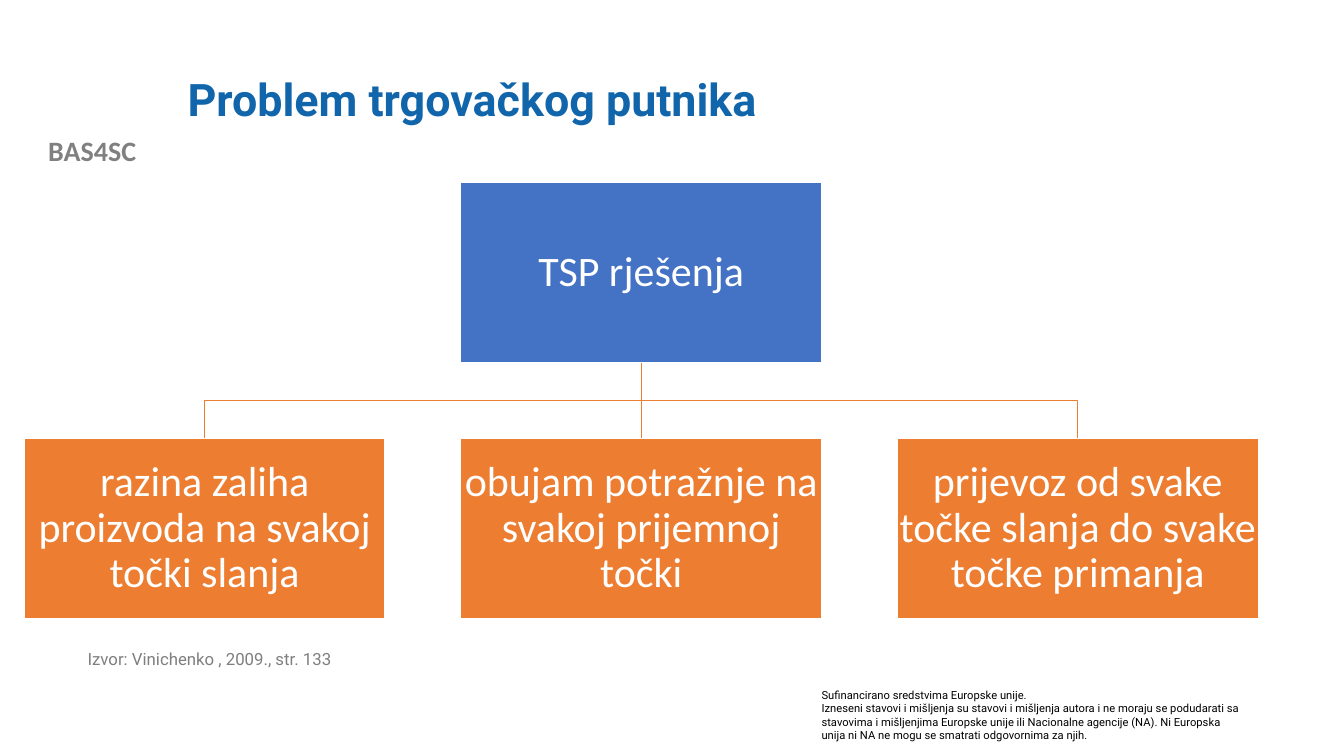
import pptx
import pptx.util
import pptx.dml.color
import pptx.enum.shapes
import pptx.enum.text
import pptx.oxml
import pptx.oxml.ns

Inches, Pt = pptx.util.Inches, pptx.util.Pt
ALIGN, ANCHOR = pptx.enum.text.PP_ALIGN, pptx.enum.text.MSO_ANCHOR
COLORS = {"white": "FFFFFF", "root": "4472C4", "branch": "ED7D31", "title": "1065AB",
          "project": "808080", "source": "7F7F7F", "black": "000000"}
ROOT = "TSP rješenja"
BRANCHES = ["razina zaliha proizvoda na svakoj točki slanja",
            "obujam potražnje na svakoj prijemnoj točki",
            "prijevoz od svake točke slanja do svake točke primanja"]
DISCLAIMER = ("Sufinancirano sredstvima Europske unije.\n"
              "Izneseni stavovi i mišljenja su stavovi i mišljenja autora i ne moraju se "
              "podudarati sa stavovima i mišljenjima Europske unije ili Nacionalne agencije "
              "(NA). Ni Europska unija ni NA ne mogu se smatrati odgovornima za njih.")


def rgb(name):
    return pptx.dml.color.RGBColor.from_string(COLORS[name])


def write(tf, text, size, color, font="Roboto", bold=False, align=ALIGN.LEFT, spacing=None):
    tf.word_wrap = True
    tf.text = text
    for p in tf.paragraphs:
        p.alignment = align
        p.line_spacing = spacing
        for r in p.runs:
            r.font.name, r.font.size, r.font.bold = font, Pt(size), bold
            r.font.color.rgb = rgb(color)


def add_title(s, box, text):
    title = s.shapes.title
    title.left, title.top, title.width, title.height = map(Inches, box)
    write(title.text_frame, text, 32, "title", bold=True, spacing=0.9)
    title.text_frame.vertical_anchor = ANCHOR.MIDDLE
    title.text_frame.auto_size = pptx.enum.text.MSO_AUTO_SIZE.NONE


def add_text(s, box, text, size, color, **style):
    write(s.shapes.add_textbox(*map(Inches, box)).text_frame, text, size, color, **style)


def style_line(sp, color):
    sp.line.color.rgb = rgb(color)
    sp.line.width = Pt(1)


def add_node(s, box, text, fill):
    sp = s.shapes.add_shape(pptx.enum.shapes.MSO_SHAPE.RECTANGLE, *map(Inches, box))
    sp.shadow.inherit = False
    sp.fill.solid()
    sp.fill.fore_color.rgb = rgb(fill)
    style_line(sp, "white")
    tf = sp.text_frame
    tf.margin_left = tf.margin_right = tf.margin_top = tf.margin_bottom = Inches(0.02)
    tf.vertical_anchor = ANCHOR.MIDDLE
    write(tf, text, 30, "white", font="Calibri", align=ALIGN.CENTER, spacing=0.9)
    return sp


def add_elbow(s, start, end):
    (x1, y1), (x2, y2) = map(Inches, start), map(Inches, end)
    middle = (y1 + y2) // 2
    builder = s.shapes.build_freeform(x1, y1)
    builder.add_line_segments([(x1, middle), (x2, middle), (x2, y2)], close=False)
    sp = builder.convert_to_shape()
    sp.shadow.inherit = False
    sp.fill.background()
    style_line(sp, "branch")


def add_stem(s, upper, lower):
    x = upper.left + upper.width // 2
    line = s.shapes.add_connector(pptx.enum.shapes.MSO_CONNECTOR.STRAIGHT,
                                  x, upper.top + upper.height, x, lower.top)
    style_line(line, "branch")
    line._element.spPr.append(pptx.oxml.parse_xml(
        "<a:effectLst %s/>" % pptx.oxml.ns.nsdecls("a")))
    line.begin_connect(upper, 2)
    line.end_connect(lower, 0)


def add_tree(s, box):
    """Root above a row of branches; gaps across and down are equal."""
    left, top, width, height = box
    gap = 0.75
    node_w = (width - gap * (len(BRANCHES) - 1)) / len(BRANCHES)
    node_h = (height - gap) / 2
    branch_top = top + node_h + gap
    lefts = [left + i * (node_w + gap) for i in range(len(BRANCHES))]
    middle = len(BRANCHES) // 2
    root_left = lefts[middle]
    for x in (lefts[-1], lefts[0]):
        add_elbow(s, (root_left + node_w / 2, top + node_h), (x + node_w / 2, branch_top))
    root = add_node(s, (root_left, top, node_w, node_h), ROOT, "root")
    nodes = [add_node(s, (x, branch_top, node_w, node_h), text, "branch")
             for x, text in zip(lefts, BRANCHES)]
    add_stem(s, root, nodes[middle])


def main():
    prs = pptx.Presentation()
    prs.slide_width, prs.slide_height = Inches(13.33), Inches(7.5)
    s = prs.slides.add_slide(prs.slide_layouts[5])
    add_title(s, (1.76, 0.4, 11.57, 1.22), "Problem trgovačkog putnika")
    add_text(s, (0, 1.28, 1.83, 0.44), "BAS4SC", 20, "project",
             font="Calibri", bold=True, align=ALIGN.CENTER)
    add_tree(s, (0.24, 1.81, 12.24, 4.33))
    add_text(s, (0.77, 6.41, 5.01, 0.52), "Izvor: Vinichenko , 2009., str. 133", 12,
             "source", spacing=0.9)
    add_text(s, (8.05, 6.78, 4.37, 0.64), DISCLAIMER, 8, "black")
    prs.save("out.pptx")


if __name__ == "__main__":
    main()
